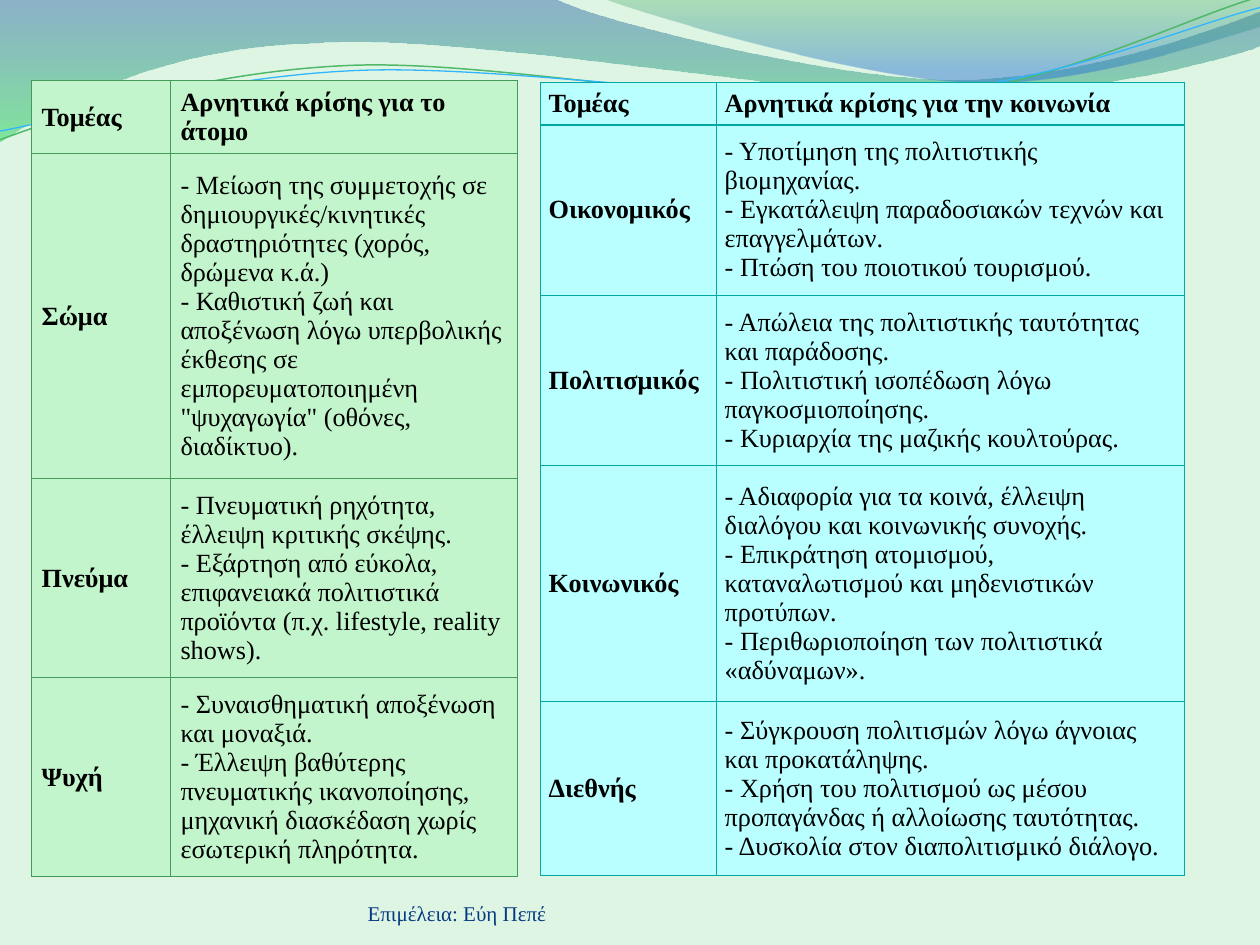
from copy import deepcopy
from dataclasses import dataclass

from lxml.etree import SubElement
from pptx import Presentation
from pptx.dml.color import RGBColor as Rgb
from pptx.enum.text import MSO_ANCHOR as Anchor
from pptx.oxml.ns import qn
from pptx.util import Cm, Pt


@dataclass(frozen=True)
class Theme:
    """Colours, type and sizes of the slide."""
    font: str = "Times New Roman"
    cell_size: float = 15
    credit_size: float = 12
    border_width: float = 0.75
    background: str = "DEF5E4"
    text: str = "000000"
    credit: str = "073B81"
    person_fill: str = "C2F5CC"
    person_border: str = "429B58"
    society_fill: str = "B9FFFF"
    society_border: str = "01A8A4"
    green_line: str = "50B86A"
    blue_line: str = "31B6FD"
    left_wave: tuple = ((0, "2960A7", 45), (1, "35DA5E", 55))
    right_wave: tuple = ((0, "36A752", 30), (0.8, "2472D3", 45))


THEME = Theme()

LEFT_WAVE = [
    (0, 0), (4.4, -0.01),
    (4.76, 0.17, 6.64, 0.63, 7.58, 0.63), (8.53, 0.63, 9.58, 0.26, 10, 0.09),
    (10.01, 0.36),
    (9.83, 0.44, 8.7, 0.76, 7.46, 0.75), (6.22, 0.75, 3.82, 0.28, 2.57, 0.34),
    (1.29, 0.36, 0.46, 0.83, -0.01, 1.13), (0, 0),
]
RIGHT_WAVE = [
    (4.79, -0.01),
    (5.09, 0.11, 6.82, 0.62, 7.69, 0.65), (8.56, 0.69, 9.61, 0.32, 10, 0.21),
    (10, 0), (4.79, -0.01),
]
GREEN_CURVE = [
    (0, 1.11),
    (0.48, 0.93, 1.58, 0.57, 2.77, 0.52), (3.95, 0.47, 5.93, 0.89, 7.13, 0.8),
    (8.33, 0.71, 9.38, 0.15, 9.98, -0.02),
]
BLUE_CURVE = [
    (0, 1.04),
    (0.47, 0.96, 1.64, 0.61, 2.83, 0.56), (4.03, 0.51, 5.97, 0.84, 7.17, 0.75),
    (8.36, 0.67, 9.41, 0.21, 10, 0.06),
]

PERSON_ROWS = [
    ("Τομέας", ["Αρνητικά κρίσης για το άτομο"]),
    ("Σώμα", [
        "- Μείωση της συμμετοχής σε δημιουργικές/κινητικές δραστηριότητες (χορός, δρώμενα κ.ά.)",
        "- Καθιστική ζωή και αποξένωση λόγω υπερβολικής έκθεσης σε εμπορευματοποιημένη "
        "\"ψυχαγωγία\" (οθόνες, διαδίκτυο)."]),
    ("Πνεύμα", [
        "- Πνευματική ρηχότητα, έλλειψη κριτικής σκέψης.",
        "- Εξάρτηση από εύκολα, επιφανειακά πολιτιστικά προϊόντα (π.χ. lifestyle, reality shows)."]),
    ("Ψυχή", [
        "- Συναισθηματική αποξένωση και μοναξιά.",
        "- Έλλειψη βαθύτερης πνευματικής ικανοποίησης, μηχανική διασκέδαση χωρίς "
        "εσωτερική πληρότητα."]),
]
SOCIETY_ROWS = [
    ("Τομέας", ["Αρνητικά κρίσης για την κοινωνία"]),
    ("Οικονομικός", [
        "- Υποτίμηση της πολιτιστικής βιομηχανίας.",
        "- Εγκατάλειψη παραδοσιακών τεχνών και επαγγελμάτων.",
        "- Πτώση του ποιοτικού τουρισμού."]),
    ("Πολιτισμικός", [
        "- Απώλεια της πολιτιστικής ταυτότητας και παράδοσης.",
        "- Πολιτιστική ισοπέδωση λόγω παγκοσμιοποίησης.",
        "- Κυριαρχία της μαζικής κουλτούρας."]),
    ("Κοινωνικός", [
        "- Αδιαφορία για τα κοινά, έλλειψη διαλόγου και κοινωνικής συνοχής.",
        "- Επικράτηση ατομισμού, καταναλωτισμού και μηδενιστικών προτύπων.",
        "- Περιθωριοποίηση των πολιτιστικά «αδύναμων»."]),
    ("Διεθνής", [
        "- Σύγκρουση πολιτισμών λόγω άγνοιας και προκατάληψης.",
        "- Χρήση του πολιτισμού ως μέσου προπαγάνδας ή αλλοίωσης ταυτότητας.",
        "- Δυσκολία στον διαπολιτισμικό διάλογο."]),
]


def add_outline(slide, segments, closed):
    """Draw a freeform of straight and Bézier segments given in inches."""
    points = [(Cm(2.54 * x), Cm(2.54 * y)) for segment in segments
              for x, y in zip(segment[::2], segment[1::2])]
    builder = slide.shapes.build_freeform(*points[0])
    builder.add_line_segments(points[1:], close=closed)
    shape = builder.convert_to_shape()
    shape.shadow.inherit = False
    lines = iter(list(shape.element.spPr.iter(qn("a:lnTo"))))
    for segment in segments[1:]:
        first = next(lines)
        if len(segment) == 6:
            first.tag = qn("a:cubicBezTo")
            for _ in range(2):
                control = next(lines)
                first.append(control[0])
                control.getparent().remove(control)
    return shape


def add_wave(slide, segments, stops):
    """Add a filled wave with a translucent vertical gradient."""
    shape = add_outline(slide, segments, True)
    shape.line.fill.background()
    shape.fill.gradient()
    shape.fill.gradient_angle = 270
    for stop, (position, color, _) in zip(shape.fill.gradient_stops, stops):
        stop.position = position
        stop.color.rgb = Rgb.from_string(color)
    for color, (_, _, opacity) in zip(shape.element.spPr.iter(qn("a:srgbClr")), stops):
        SubElement(color, qn("a:alpha"), val=str(opacity * 1000))


def add_curve(slide, segments, color, width):
    """Add an open curved line."""
    shape = add_outline(slide, segments, False)
    shape.fill.background()
    shape.line.color.rgb = Rgb.from_string(color)
    shape.line.width = Pt(width)


def format_text(text_frame, size, color, bold=False):
    """Apply the type style to every run and line break."""
    for paragraph in text_frame.paragraphs:
        for run in paragraph.runs:
            run.font.name = THEME.font
            run.font.size = Pt(size)
            run.font.bold = bold
            run.font.color.rgb = Rgb.from_string(color)
        for line_break in paragraph._p.findall(qn("a:br")):
            line_break.append(deepcopy(paragraph.runs[0]._r.rPr))


def set_borders(cell, color):
    """Draw all four borders of a cell."""
    properties = cell._tc.get_or_add_tcPr()
    for side in ("lnL", "lnR", "lnT", "lnB"):
        line = SubElement(properties, qn(f"a:{side}"), w=str(Pt(THEME.border_width)))
        SubElement(SubElement(line, qn("a:solidFill")), qn("a:srgbClr"), val=color)


def add_sector_table(slide, rows, box, widths, heights, margins, fill, border):
    """Add a table of sectors and their negative effects."""
    left, top, height = box
    frame = slide.shapes.add_table(len(rows), len(widths), Cm(left), Cm(top),
                                   Cm(sum(widths)), Cm(height))
    table = frame.table
    for column, width in zip(table.columns, widths):
        column.width = Cm(width)
    for row_index, (sector, effects) in enumerate(rows):
        table.rows[row_index].height = Cm(heights[row_index])
        for column_index, text in enumerate((sector, "\v".join(effects))):
            cell = table.cell(row_index, column_index)
            set_borders(cell, border)
            cell.fill.solid()
            cell.fill.fore_color.rgb = Rgb.from_string(fill)
            cell.vertical_anchor = Anchor.MIDDLE
            cell.margin_left = cell.margin_right = Cm(margins[0])
            cell.margin_top = cell.margin_bottom = Cm(margins[1])
            cell.text_frame.text = text
            format_text(cell.text_frame, THEME.cell_size, THEME.text,
                        row_index == 0 or column_index == 0)
    frame.height = Cm(height)


def add_credit(slide, text):
    """Add the editor's line at the foot of the slide."""
    box = slide.shapes.add_textbox(Cm(7.41), Cm(17.65), Cm(9.32), Cm(1.02))
    frame = box.text_frame
    frame.word_wrap = True
    frame.vertical_anchor = Anchor.BOTTOM
    frame.margin_left = frame.margin_right = frame.margin_top = frame.margin_bottom = 0
    frame.text = text
    format_text(frame, THEME.credit_size, THEME.credit)


def main():
    """Build and save the slide."""
    presentation = Presentation()
    presentation.slide_width, presentation.slide_height = Cm(25.4), Cm(19.05)
    slide = presentation.slides.add_slide(presentation.slide_layouts[6])
    slide.background.fill.solid()
    slide.background.fill.fore_color.rgb = Rgb.from_string(THEME.background)
    add_wave(slide, LEFT_WAVE, THEME.left_wave)
    add_wave(slide, RIGHT_WAVE, THEME.right_wave)
    add_curve(slide, GREEN_CURVE, THEME.green_line, 0.85)
    add_curve(slide, BLUE_CURVE, THEME.blue_line, 0.75)
    add_credit(slide, "Επιμέλεια: Εύη Πεπέ")
    add_sector_table(slide, PERSON_ROWS, (0.64, 1.63, 16.08), (2.8, 7),
                     (1.42, 6.35, 3.89, 3.89), (0.2, 0.1),
                     THEME.person_fill, THEME.person_border)
    add_sector_table(slide, SOCIETY_ROWS, (10.9, 1.66, 16), (3.55, 9.43),
                     (0.86, 3.43, 3.44, 4.76, 3.5), (0.16, 0.08),
                     THEME.society_fill, THEME.society_border)
    presentation.save("out.pptx")


if __name__ == "__main__":
    main()
